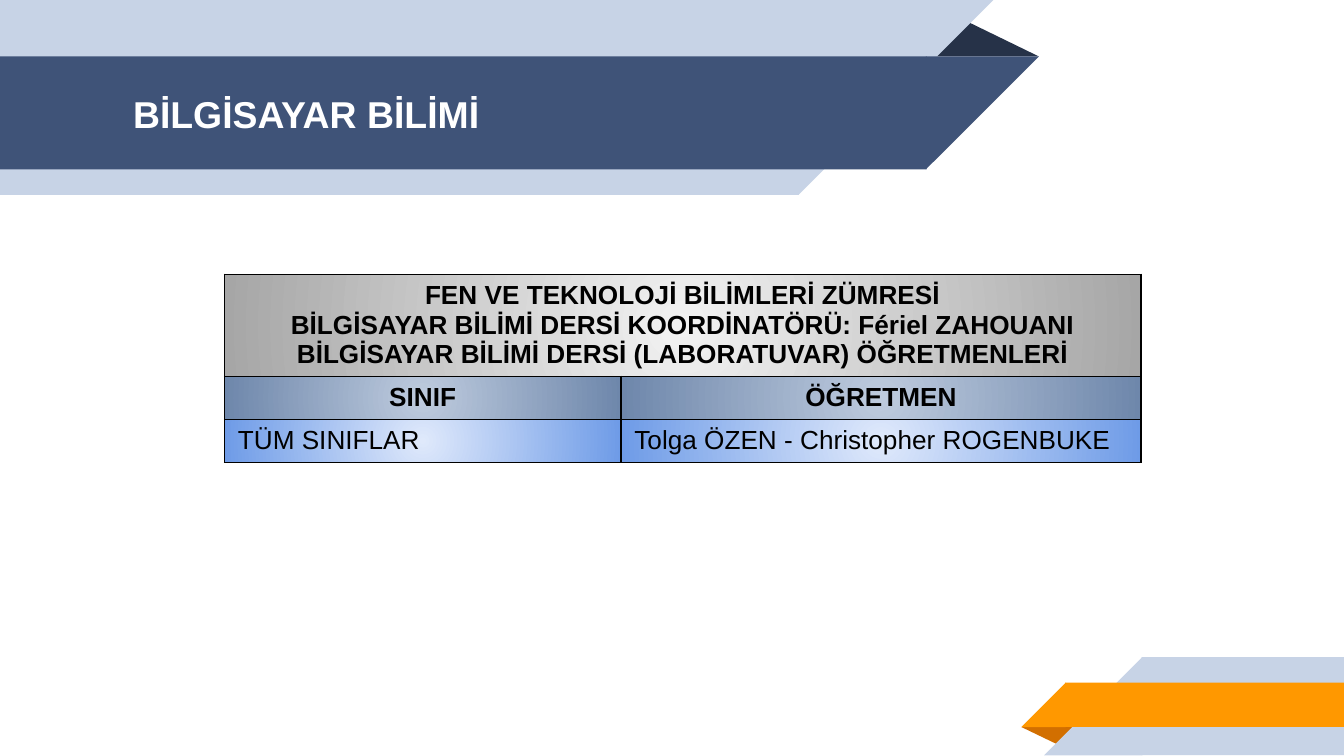
import pptx
import pptx.dml.color
import pptx.enum.shapes
import pptx.enum.text
import pptx.oxml
import pptx.oxml.ns
import pptx.util

COLORS = {
    "navy": "3F5378", "navy_fold": "263248", "pale": "C7D3E6",
    "orange": "FF9800", "orange_fold": "D26F00",
    "white": "FFFFFF", "black": "000000",
}
GRADIENTS = {
    "heading": ("F2F2F2", "A6A6A6"),
    "labels": ("BECBDE", "6E87AB"),
    "entries": ("DFE9FB", "6E9BE7"),
}
GRID_COLUMNS = 1000
GRID_ROWS = GRID_COLUMNS * 9 / 16
COLUMN_WIDTHS = (295, 50, 155, 182)
ROW_HEIGHTS = (76, 32, 32)
FOLD_PEAK = 0.324
OVERLAP = 0.5

Shape = pptx.enum.shapes.MSO_SHAPE
Align = pptx.enum.text.PP_ALIGN
Anchor = pptx.enum.text.MSO_ANCHOR


def grid(count):
    return pptx.util.Inches(count / 100)


def color(name):
    return pptx.dml.color.RGBColor.from_string(COLORS[name])


def write(frame, text, size=14, fill="black", bold=False, align=Align.LEFT):
    frame.text = text
    for paragraph in frame.paragraphs:
        paragraph.alignment = align
        font = paragraph.runs[0].font
        font.name = "Arial"
        font.size = pptx.util.Pt(size)
        font.bold = bold
        font.color.rgb = color(fill)


def add_piece(slide, kind, fill, left, top, width, height):
    piece = slide.shapes.add_shape(kind, *map(grid, (left, top, width, height)))
    piece.shadow.inherit = False
    piece.fill.solid()
    piece.fill.fore_color.rgb = color(fill)
    piece.line.fill.background()
    return piece


def add_fold(slide, fill, left, top, width, height, turn=0):
    fold = add_piece(slide, Shape.ISOSCELES_TRIANGLE, fill, left, top, width, height)
    fold.adjustments[0] = FOLD_PEAK
    fold.rotation = turn


def add_band(slide, fill, edge, top, height, from_left):
    start = 0 if from_left else edge - OVERLAP
    end = edge + OVERLAP if from_left else GRID_COLUMNS
    add_piece(slide, Shape.RECTANGLE, fill, start, top, end - start, height)
    slant_left = edge if from_left else edge - height
    slant = add_piece(slide, Shape.RIGHT_TRIANGLE, fill, slant_left, top, height, height)
    slant.rotation = 180 if from_left else 0
    slant._element.spPr.xfrm.set("flipH", "1")


def add_title(slide, text):
    title = slide.shapes.title
    title.left, title.top, title.width, title.height = map(grid, (89, 42.5, 575, 84))
    slide.shapes._spTree.append(title._element)
    frame = title.text_frame
    frame.word_wrap = True
    frame.auto_size = pptx.enum.text.MSO_AUTO_SIZE.NONE
    frame.vertical_anchor = Anchor.MIDDLE
    frame.margin_left = frame.margin_right = grid(10)
    frame.margin_top = frame.margin_bottom = grid(10)
    write(frame, text, size=20, fill="white", bold=True)


def style_cell(cell, gradient, anchor):
    cell.vertical_anchor = anchor
    cell.margin_left = cell.margin_right = grid(10)
    cell.margin_top = cell.margin_bottom = grid(5)
    namespace = pptx.oxml.ns.nsdecls("a")
    properties = cell._tc.get_or_add_tcPr()
    for side in "LRTB":
        properties.append(pptx.oxml.parse_xml(
            f'<a:ln{side} {namespace} w="{pptx.util.Pt(0.75)}"><a:solidFill>'
            f'<a:srgbClr val="{COLORS["black"]}"/></a:solidFill></a:ln{side}>'))
    inner, outer = GRADIENTS[gradient]
    properties.append(pptx.oxml.parse_xml(
        f'<a:gradFill {namespace}><a:gsLst>'
        f'<a:gs pos="0"><a:srgbClr val="{inner}"/></a:gs>'
        f'<a:gs pos="100000"><a:srgbClr val="{outer}"/></a:gs></a:gsLst>'
        '<a:path path="circle"><a:fillToRect l="50000" t="50000" r="50000" b="50000"/>'
        '</a:path></a:gradFill>'))


def add_teacher_table(slide):
    table = slide.shapes.add_table(
        len(ROW_HEIGHTS), len(COLUMN_WIDTHS), grid(167), grid(204),
        grid(sum(COLUMN_WIDTHS)), grid(sum(ROW_HEIGHTS))).table
    table.first_row = table.horz_banding = False
    for column, width in zip(table.columns, COLUMN_WIDTHS):
        column.width = grid(width)
    for row, height, gradient in zip(table.rows, ROW_HEIGHTS, GRADIENTS):
        row.height = grid(height)
        anchor = Anchor.TOP if gradient == "heading" else Anchor.MIDDLE
        for cell in row.cells:
            style_cell(cell, gradient, anchor)
    for row, first in enumerate((0, 1, 1)):
        table.cell(row, first).merge(table.cell(row, len(COLUMN_WIDTHS) - 1))

    heading = "\n".join((
        "FEN VE TEKNOLOJİ BİLİMLERİ ZÜMRESİ",
        "BİLGİSAYAR BİLİMİ DERSİ KOORDİNATÖRÜ: Fériel ZAHOUANI",
        "BİLGİSAYAR BİLİMİ DERSİ (LABORATUVAR) ÖĞRETMENLERİ"))
    write(table.cell(0, 0).text_frame, heading, bold=True, align=Align.CENTER)
    for column, label in enumerate(("SINIF", "ÖĞRETMEN")):
        write(table.cell(1, column).text_frame, label, bold=True, align=Align.CENTER)
    for column, entry in enumerate(("TÜM SINIFLAR", "Tolga ÖZEN - Christopher ROGENBUKE")):
        write(table.cell(2, column).text_frame, entry)


def main():
    presentation = pptx.Presentation()
    presentation.slide_width = grid(GRID_COLUMNS)
    presentation.slide_height = grid(GRID_ROWS)
    slide = presentation.slides.add_slide(presentation.slide_layouts[5])
    add_fold(slide, "navy_fold", 688, 14, 85, 28)
    add_band(slide, "pale", 594, 0, 145, from_left=True)
    add_band(slide, "navy", 689, 42, 84, from_left=True)
    add_fold(slide, "orange_fold", 760, 541, 43, 14, turn=180)
    add_band(slide, "pale", 850, 489, 73, from_left=False)
    add_band(slide, "orange", 793, 508, 33, from_left=False)
    add_title(slide, "BİLGİSAYAR BİLİMİ")
    add_teacher_table(slide)
    presentation.save("out.pptx")


if __name__ == "__main__":
    main()
